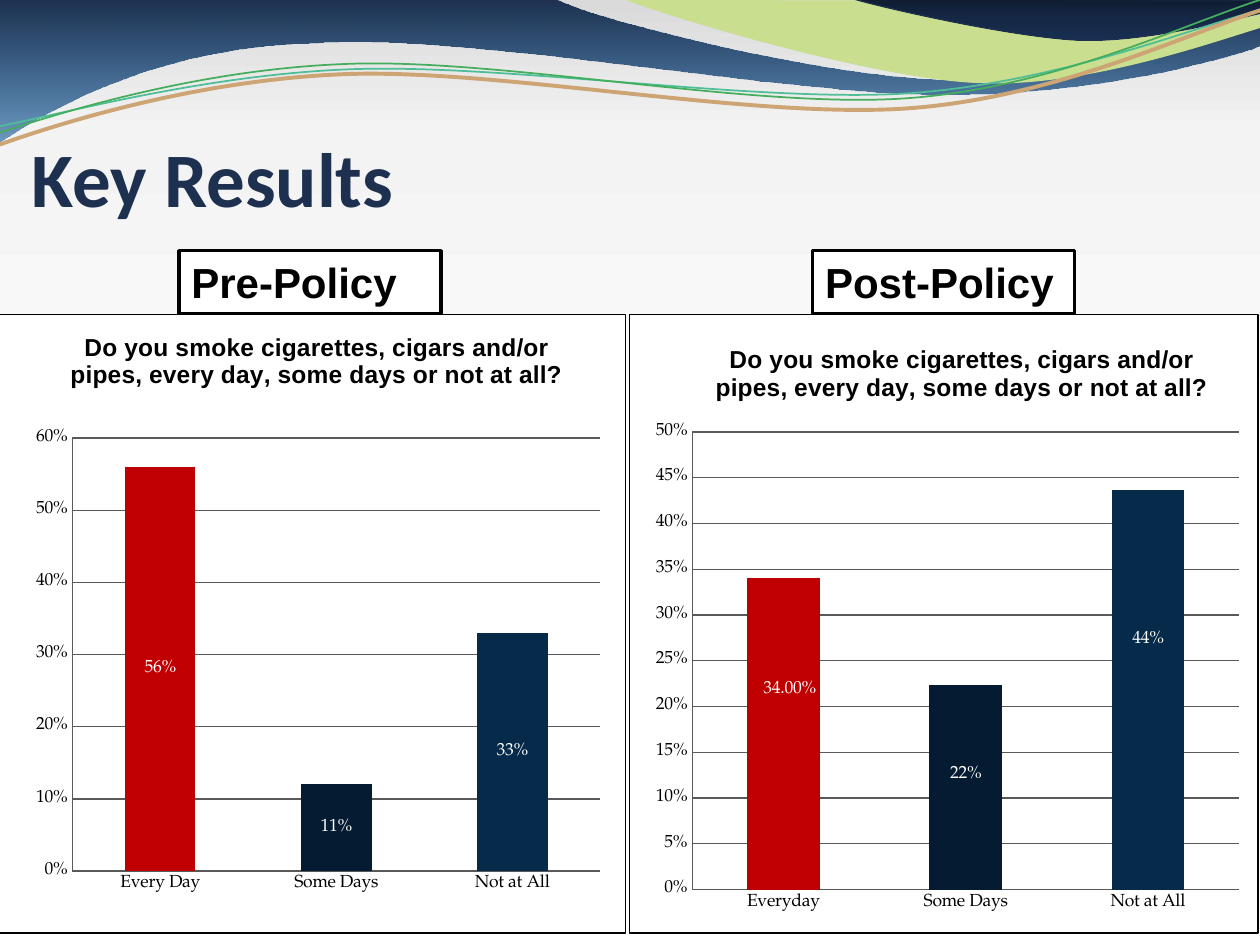
import math

import lxml.etree
import pptx
import pptx.chart.data
import pptx.dml.color
import pptx.enum.chart
import pptx.enum.shapes
import pptx.enum.text
import pptx.oxml
import pptx.oxml.ns
import pptx.util

Inches = pptx.util.Inches
Pt = pptx.util.Pt
RGBColor = pptx.dml.color.RGBColor
qn = pptx.oxml.ns.qn

BLACK = RGBColor(0x00, 0x00, 0x00)
WHITE = RGBColor(0xFF, 0xFF, 0xFF)
NAVY = RGBColor(0x1D, 0x30, 0x4F)
DEEP_BLUE = RGBColor(0x00, 0x4C, 0x90)
LIME = RGBColor(0xC9, 0xDE, 0x8F)
NIGHT = RGBColor(0x0F, 0x1C, 0x31)
NIGHT_MID = RGBColor(0x15, 0x28, 0x46)
NIGHT_END = RGBColor(0x19, 0x2F, 0x53)
TEAL = RGBColor(0x4E, 0xBE, 0x98)
TAN = RGBColor(0xCD, 0xA4, 0x74)
GREEN = RGBColor(0x45, 0xAE, 0x5C)
PALE_GRAY = RGBColor(0xF3, 0xF3, 0xF3)
MID_GRAY = RGBColor(0xDA, 0xDA, 0xDA)
GRID_GRAY = RGBColor(0x59, 0x59, 0x59)
RED = RGBColor(0xC0, 0x00, 0x00)
DARK_BAR = RGBColor(0x04, 0x1B, 0x31)
BLUE_BAR = RGBColor(0x05, 0x2A, 0x4A)

QUESTION = "Do you smoke cigarettes, cigars and/or pipes, every day, some days or not at all?"
TILT = 2.7


def turned(point, pivot):
    angle = math.radians(TILT)
    dx, dy = point[0] - pivot[0], point[1] - pivot[1]
    return (pivot[0] + dx * math.cos(angle) - dy * math.sin(angle),
            pivot[1] + dx * math.sin(angle) + dy * math.cos(angle))


class ResultsSlide:
    title_font = "Calibri"
    label_font = "Arial"
    chart_font = "TeX Gyre Pagella"

    def __init__(self, slide):
        self.slide = slide

    def style(self, font, name, size, color, bold=False):
        font.name, font.size, font.bold = name, Pt(size), bold
        font.color.rgb = color

    def gradient(self, fill, owner, stops, angle):
        fill.gradient()
        fill.gradient_angle = angle
        stop_list = next(owner.iter(qn("a:gsLst")))
        for stop in list(stop_list):
            stop_list.remove(stop)
        for position, color, opacity in stops:
            stop = lxml.etree.SubElement(stop_list, qn("a:gs"), pos=str(position * 1000))
            shade = lxml.etree.SubElement(stop, qn("a:srgbClr"), val=str(color))
            if opacity < 100:
                lxml.etree.SubElement(shade, qn("a:alpha"), val=str(opacity * 1000))

    def background(self, stops):
        self.gradient(self.slide.background.fill, self.slide._element, stops, 90)

    def wave(self, start, segments, fill=None, stops=None, line=None, width=1, pivot=None):
        points = [start] + [s[i:i + 2] for s in segments for i in range(0, len(s), 2)]
        if pivot:
            points = [turned(point, pivot) for point in points]
        outline = [(Inches(x), Inches(y)) for x, y in points]
        builder = self.slide.shapes.build_freeform(*outline[0], scale=1.0)
        builder.add_line_segments(outline[1:], close=bool(fill or stops))
        shape = builder.convert_to_shape()
        self.bend(shape, segments)
        shape.shadow.inherit = False
        if pivot:
            shape.rotation = 360 - TILT
        if stops:
            self.gradient(shape.fill, shape._element, stops, 270)
        elif fill:
            shape.fill.solid()
            shape.fill.fore_color.rgb = fill
        else:
            shape.fill.background()
        if line:
            shape.line.color.rgb = line
            shape.line.width = Pt(width)
        else:
            shape.line.fill.background()

    def bend(self, shape, segments):
        strokes = iter(list(shape._element.iter(qn("a:lnTo"))))
        for segment in segments:
            pieces = [next(strokes) for _ in range(len(segment) // 2)]
            if len(pieces) == 3:
                curve = lxml.etree.Element(qn("a:cubicBezTo"))
                pieces[0].addprevious(curve)
                for piece in pieces:
                    curve.append(piece[0])
                    piece.getparent().remove(piece)

    def title(self, text):
        box = self.slide.shapes.add_textbox(Inches(0.25), Inches(0.99), Inches(9), Inches(1.25))
        frame = box.text_frame
        frame.word_wrap = True
        frame.margin_left = frame.margin_right = frame.margin_bottom = 0
        frame.text = text
        self.style(frame.paragraphs[0].runs[0].font, self.title_font, 44, NAVY, True)

    def period_label(self, text, left):
        box = self.slide.shapes.add_shape(
            pptx.enum.shapes.MSO_SHAPE.RECTANGLE, Inches(left), Inches(1.99), Inches(2.08), Inches(0.5))
        box.shadow.inherit = False
        box.fill.solid()
        box.fill.fore_color.rgb = WHITE
        box.line.color.rgb = BLACK
        box.line.width = Pt(2)
        frame = box.text_frame
        frame.text = text
        frame.vertical_anchor = pptx.enum.text.MSO_ANCHOR.TOP
        frame.paragraphs[0].alignment = pptx.enum.text.PP_ALIGN.LEFT
        self.style(frame.paragraphs[0].runs[0].font, self.label_font, 24, BLACK, True)

    def chart(self, left, categories, values, top, step, label_format, plot, title_at, labels):
        data = pptx.chart.data.CategoryChartData()
        data.categories = categories
        data.add_series("Series 1", values)
        chart = self.slide.shapes.add_chart(
            pptx.enum.chart.XL_CHART_TYPE.COLUMN_CLUSTERED,
            Inches(left), Inches(2.49), Inches(5), Inches(4.92), data).chart
        self.style(chart.font, self.chart_font, 10, BLACK)
        chart.has_legend = False
        self.chart_frame(chart)
        chart.has_title = True
        heading = chart.chart_title
        heading.text_frame.text = QUESTION
        self.style(heading.text_frame.paragraphs[0].runs[0].font, self.label_font, 14, BLACK, True)
        heading.include_in_layout = False
        self.place(heading._element, "c:tx", xMode="edge", yMode="edge", x=title_at[0], y=title_at[1])
        x, y, w, h = plot
        self.place(chart._chartSpace.chart.plotArea, None, layoutTarget="inner",
                   xMode="edge", yMode="edge", x=x, y=y, w=w, h=h)
        scale = chart.value_axis
        scale.minimum_scale, scale.maximum_scale, scale.major_unit = 0, top, step
        scale.tick_labels.number_format = "0%"
        scale.tick_labels.number_format_is_linked = False
        for axis in (scale, chart.category_axis):
            axis.major_tick_mark = pptx.enum.chart.XL_TICK_MARK.NONE
            axis.format.line.color.rgb = GRID_GRAY
        scale.major_gridlines.format.line.color.rgb = GRID_GRAY
        self.bars(chart.plots[0], label_format, labels)

    def chart_frame(self, chart):
        chart._chartSpace.chart.addnext(pptx.oxml.parse_xml(
            '<c:spPr xmlns:c="http://schemas.openxmlformats.org/drawingml/2006/chart" '
            'xmlns:a="http://schemas.openxmlformats.org/drawingml/2006/main">'
            f'<a:solidFill><a:srgbClr val="{WHITE}"/></a:solidFill><a:ln w="{Pt(0.75)}">'
            f'<a:solidFill><a:srgbClr val="{BLACK}"/></a:solidFill></a:ln></c:spPr>'))

    def place(self, owner, after, **places):
        for old in owner.findall(qn("c:layout")):
            owner.remove(old)
        layout = lxml.etree.Element(qn("c:layout"))
        manual = lxml.etree.SubElement(layout, qn("c:manualLayout"))
        for tag, value in places.items():
            lxml.etree.SubElement(manual, qn(f"c:{tag}")).set("val", str(value))
        if after:
            owner.find(qn(after)).addnext(layout)
        else:
            owner.insert(0, layout)

    def bars(self, plot, label_format, labels):
        center = pptx.enum.chart.XL_LABEL_POSITION.CENTER
        plot.gap_width = 150
        plot.vary_by_categories = False
        series = plot.series[0]
        for index, color in enumerate((RED, DARK_BAR, BLUE_BAR)):
            bar = series.points[index].format.fill
            bar.solid()
            bar.fore_color.rgb = color
        shown = series.data_labels
        shown.show_value = True
        shown.number_format = label_format
        shown.number_format_is_linked = False
        shown.position = center
        self.style(shown.font, self.chart_font, 10, WHITE)
        for leader in series._element.iter(qn("c:showLeaderLines")):
            leader.set("val", "0")
        for index, (text, dx, dy) in labels.items():
            label = series.points[index].data_label
            font = label.font
            if text:
                label.text_frame.text = text
                font = label.text_frame.paragraphs[0].runs[0].font
            self.style(font, self.chart_font, 10, WHITE)
            label.position = center
            element = next(e for e in series._element.iter(qn("c:dLbl"))
                           if e.find(qn("c:idx")).get("val") == str(index))
            self.place(element, "c:idx", x=dx, y=dy)
            if not text:
                number = lxml.etree.Element(qn("c:numFmt"), formatCode=label_format, sourceLinked="0")
                element.find(qn("c:layout")).addnext(number)


def main():
    deck = pptx.Presentation()
    deck.slide_width, deck.slide_height = Inches(10), Inches(7.5)
    page = ResultsSlide(deck.slides.add_slide(deck.slide_layouts[6]))
    page.background([(47, WHITE, 100), (86, PALE_GRAY, 100), (100, MID_GRAY, 100)])
    page.wave((0, 0), [(4.4, -0.01), (4.76, 0.17, 6.64, 0.63, 7.58, 0.63),
                       (8.53, 0.63, 9.58, 0.26, 10, 0.09), (10.01, 0.36),
                       (9.83, 0.44, 8.7, 0.76, 7.46, 0.75), (6.22, 0.75, 3.82, 0.28, 2.57, 0.34),
                       (1.29, 0.36, 0.46, 0.83, -0.01, 1.13), (0, 0)],
              stops=[(0, NAVY, 100), (100, DEEP_BLUE, 55)])
    page.wave((4.97, 0), [(5.26, 0.12, 6.93, 0.63, 7.77, 0.66), (8.61, 0.7, 9.64, 0.33, 10.01, 0.22),
                          (10.01, 0.01), (4.97, 0)], fill=LIME)
    page.wave((6.77, -0.01), [(6.96, 0.05, 8.04, 0.3, 8.59, 0.32), (9.13, 0.33, 9.79, 0.15, 10.03, 0.1),
                              (10.03, 0), (6.77, -0.01)],
              stops=[(0, NIGHT, 100), (50, NIGHT_MID, 100), (100, NIGHT_END, 100)],
              line=NAVY, width=0.75)
    page.wave((-0.15, 1.03), [(0.33, 0.95, 1.53, 0.6, 2.76, 0.55), (3.99, 0.5, 6, 0.82, 7.22, 0.74),
                              (8.45, 0.65, 9.53, 0.19, 10.14, 0.04)], line=TEAL, pivot=(4.99, 0.58))
    page.wave((-0.12, 1.19), [(0.37, 1.01, 1.5, 0.64, 2.72, 0.59), (3.95, 0.54, 5.97, 0.95, 7.21, 0.86),
                              (8.45, 0.77, 9.53, 0.21, 10.14, 0.04)], line=TAN, width=2.25, pivot=(5.02, 0.65))
    page.wave((-0.14, 1.1), [(0.36, 0.93, 1.49, 0.56, 2.71, 0.51), (3.93, 0.45, 5.96, 0.87, 7.2, 0.78),
                             (8.44, 0.69, 9.52, 0.13, 10.13, -0.04)], line=GREEN, pivot=(5, 0.57))
    page.title("Key Results")
    page.chart(-0.03, ["Every Day", "Some Days", "Not at All"], [0.56, 0.12, 0.33], 0.6, 0.1, "0%",
               (0.12, 0.2, 0.84, 0.7), (0.11, 0.02), {1: ("11%", 0, 0)})
    page.period_label("Pre-Policy", 1.42)
    page.chart(4.99, ["Everyday", "Some Days", "Not at All"], [0.34, 0.223, 0.437], 0.5, 0.05, "0.00%",
               (0.1, 0.19, 0.87, 0.74), (0.13, 0.04),
               {0: (None, 0.01, -0.07), 1: ("22%", 0, -0.02), 2: ("44%", 0, -0.08)})
    page.period_label("Post-Policy", 6.45)
    deck.save("out.pptx")


if __name__ == "__main__":
    main()
